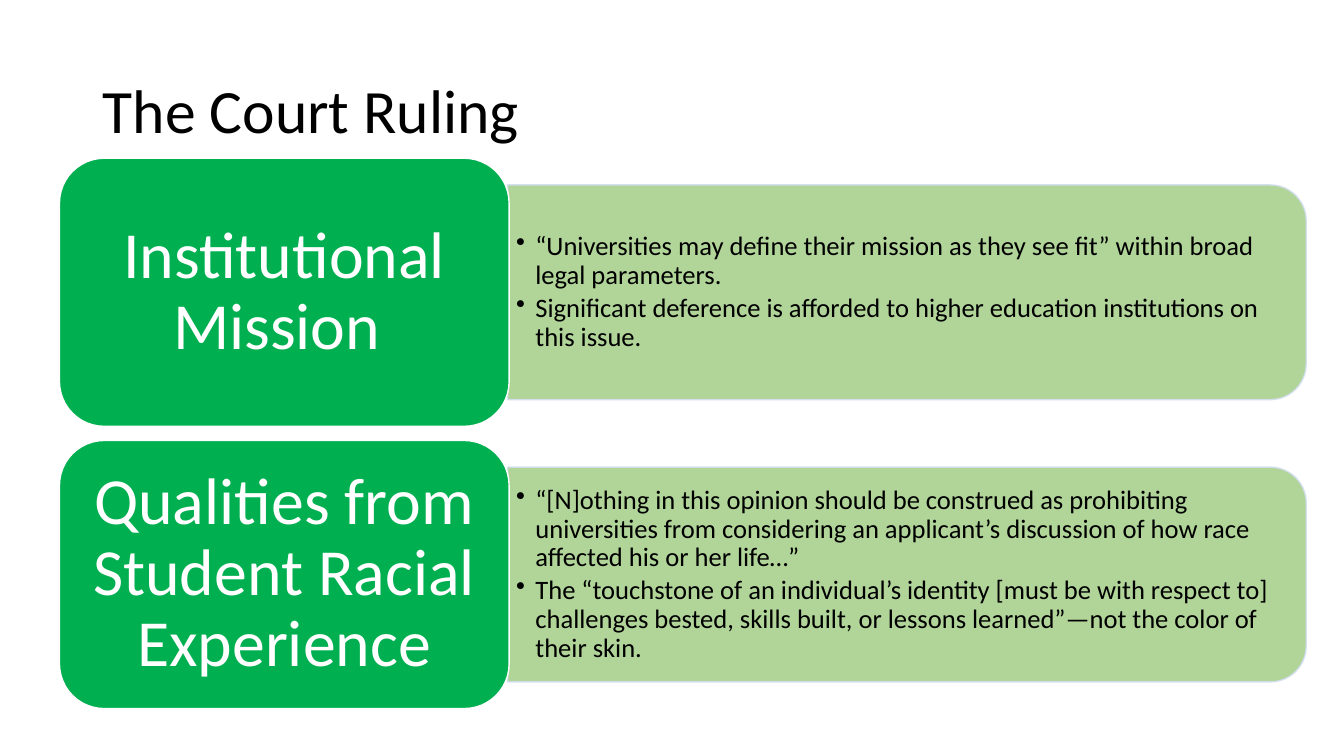
from dataclasses import dataclass
from typing import Any

from lxml import etree
from pptx import Presentation
from pptx import util as u
from pptx.dml.color import RGBColor
from pptx.enum import shapes, text
from pptx.oxml import ns

PX = u.Inches(1) // 100  # one px is a hundredth of an inch


@dataclass(frozen=True)
class Theme:
    font: str = "Calibri"
    ink: str = "000000"
    card: str = "00B050"
    card_text: str = "FFFFFF"
    card_line: str = "FFFFFF"
    panel: str = "A9D18E"
    panel_line: str = "D2DEEF"
    panel_opacity: int = 90
    title_size: int = 44
    card_size: int = 47
    bullet_size: int = 19


@dataclass(frozen=True)
class Box:
    left: int
    top: int
    width: int
    height: int

    def emu(self) -> tuple[int, ...]:
        return tuple(value * PX for value in (self.left, self.top, self.width, self.height))


@dataclass(frozen=True)
class Topic:
    heading: str
    points: tuple[str, ...]


THEME = Theme()
SLIDE_WIDTH, SLIDE_HEIGHT = 1333, 750
TITLE = Box(92, 40, 1150, 145)
FIRST_CARD = Box(59, 157, 446, 266)
ROW_PITCH = 280
PANEL_LEFT, PANEL_WIDTH, PANEL_HEIGHT = 504, 792, 213
POINTS_WIDTH, POINTS_HEIGHT = 782, 192
BULLET_INDENT = 19

TOPICS = (
    Topic("Institutional Mission ", (
        "“Universities may define their mission as they see fit” within broad legal parameters.",
        "Significant deference is afforded to higher education institutions on this issue.",
    )),
    Topic("Qualities from Student Racial Experience", (
        "“[N]othing in this opinion should be construed as prohibiting universities from "
        "considering an applicant’s discussion of how race affected his or her life…”",
        "The “touchstone of an individual’s identity [must be with respect to] challenges "
        "bested, skills built, or lessons learned”—not the color of their skin.",
    )),
)


def apply_format(target: Any, values: dict[str, Any]) -> None:
    for name, value in values.items():
        setattr(target, name, value)


def format_frame(frame: Any, side: int, end: int) -> None:
    apply_format(frame, {
        "word_wrap": True,
        "auto_size": text.MSO_AUTO_SIZE.NONE,
        "vertical_anchor": text.MSO_ANCHOR.MIDDLE,
        "margin_left": side * PX, "margin_right": side * PX,
        "margin_top": end * PX, "margin_bottom": end * PX,
    })


def write(paragraph: Any, words: str, size: int, color: str, alignment: Any) -> None:
    run = paragraph.add_run()
    run.text = words
    apply_format(paragraph, {"alignment": alignment, "line_spacing": 0.9})
    apply_format(run.font, {"name": THEME.font, "size": u.Pt(size)})
    run.font.color.rgb = RGBColor.from_string(color)


def add_bullet(paragraph: Any) -> None:
    properties = paragraph._p.get_or_add_pPr()
    properties.set("marL", str(BULLET_INDENT * PX))
    properties.set("indent", str(-BULLET_INDENT * PX))
    etree.SubElement(properties, ns.qn("a:buChar")).set("char", "•")


def add_block(slide: Any, kind: Any, box: Box, fill: str, line: str) -> Any:
    shape = slide.shapes.add_shape(kind, *box.emu())
    shape.shadow.inherit = False
    shape.fill.solid()
    shape.fill.fore_color.rgb = RGBColor.from_string(fill)
    shape.line.color.rgb = RGBColor.from_string(line)
    shape.line.width = u.Pt(1)
    return shape


def add_panel(slide: Any, middle: int) -> None:
    # Width and height swap because the shape is turned by a quarter
    box = Box(PANEL_LEFT + (PANEL_WIDTH - PANEL_HEIGHT) // 2, middle - PANEL_WIDTH // 2,
              PANEL_HEIGHT, PANEL_WIDTH)
    panel = add_block(slide, shapes.MSO_SHAPE.ROUND_2_SAME_RECTANGLE, box,
                      THEME.panel, THEME.panel_line)
    panel.rotation = 90
    for color in panel._element.spPr.iter(ns.qn("a:srgbClr")):
        alpha = etree.SubElement(color, ns.qn("a:alpha"))
        alpha.set("val", str(THEME.panel_opacity * 1000))


def add_points(slide: Any, middle: int, points: tuple[str, ...]) -> None:
    box = Box(PANEL_LEFT, middle - POINTS_HEIGHT // 2, POINTS_WIDTH, POINTS_HEIGHT)
    frame = slide.shapes.add_textbox(*box.emu()).text_frame
    format_frame(frame, 8, 4)
    for index, point in enumerate(points):
        paragraph = frame.add_paragraph() if index else frame.paragraphs[0]
        write(paragraph, point, THEME.bullet_size, THEME.ink, text.PP_ALIGN.LEFT)
        paragraph.space_after = u.Pt(3)
        add_bullet(paragraph)


def add_card(slide: Any, box: Box, heading: str) -> None:
    card = add_block(slide, shapes.MSO_SHAPE.ROUNDED_RECTANGLE, box,
                     THEME.card, THEME.card_line)
    format_frame(card.text_frame, 20, 10)
    write(card.text_frame.paragraphs[0], heading, THEME.card_size,
          THEME.card_text, text.PP_ALIGN.CENTER)


def add_title(slide: Any, words: str) -> None:
    title = slide.shapes.title
    apply_format(title, dict(zip(("left", "top", "width", "height"), TITLE.emu())))
    format_frame(title.text_frame, 10, 5)
    write(title.text_frame.paragraphs[0], words, THEME.title_size,
          THEME.ink, text.PP_ALIGN.LEFT)


def main() -> None:
    presentation = Presentation()
    apply_format(presentation, {"slide_width": SLIDE_WIDTH * PX,
                                "slide_height": SLIDE_HEIGHT * PX})
    slide = presentation.slides.add_slide(presentation.slide_layouts[5])
    add_title(slide, "The Court Ruling")

    # One row per topic: panel, its points, then the card on top
    for row, topic in enumerate(TOPICS):
        card = Box(FIRST_CARD.left, FIRST_CARD.top + row * ROW_PITCH,
                   FIRST_CARD.width, FIRST_CARD.height)
        middle = card.top + card.height // 2
        add_panel(slide, middle)
        add_points(slide, middle, topic.points)
        add_card(slide, card, topic.heading)

    presentation.save("out.pptx")


if __name__ == "__main__":
    main()
